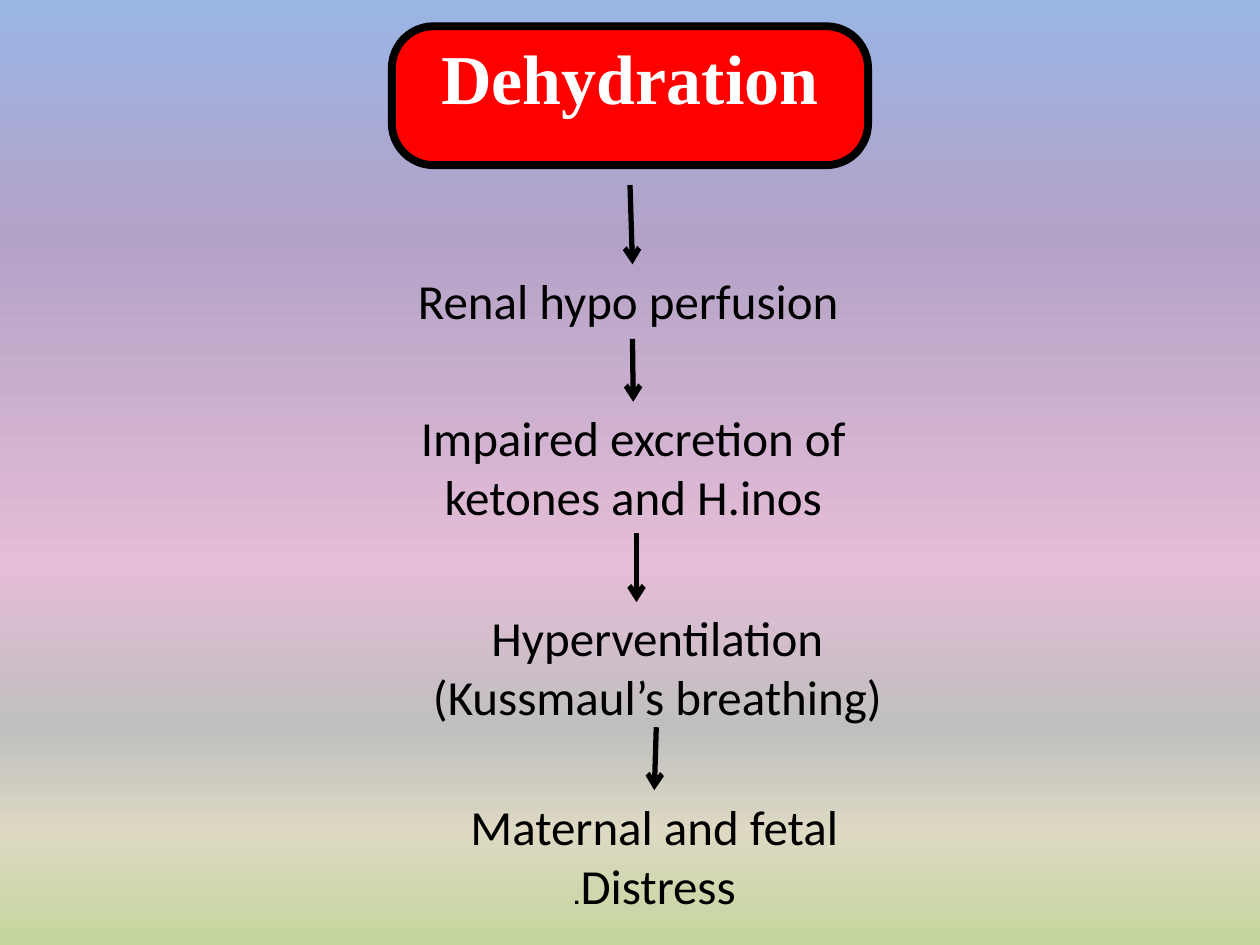
"""Build the dehydration flow chart slide."""
import pptx
import pptx.dml.color
import pptx.enum.shapes
import pptx.enum.text
import pptx.oxml.ns
import pptx.util
from lxml import etree
from pptx.util import Cm

qn = pptx.oxml.ns.qn


def rgb(value):
    return pptx.dml.color.RGBColor.from_string(value)


def set_font(font, name, size, color):
    font.name = name
    font.size = pptx.util.Pt(size)
    font.color.rgb = rgb(color)


prs = pptx.Presentation()
prs.slide_width, prs.slide_height = Cm(25.4), Cm(19.05)
s = prs.slides.add_slide(prs.slide_layouts[6])

fill = s.background.fill
fill.gradient()
fill.gradient_angle = 270
stops = s._element.find(".//" + qn("a:gsLst"))
for gs in list(stops):
    stops.remove(gs)
for pos, color in [(0, "9AB5E4"), (25, "B3A2C7"), (60, "E5BDD7"),
                   (77, "BFBFBF"), (88, "DDD9C3"), (100, "C3D69B")]:
    gs = etree.SubElement(stops, qn("a:gs"), pos=str(pos * 1000))
    etree.SubElement(gs, qn("a:srgbClr"), val=color)

sp = s.shapes.add_shape(pptx.enum.shapes.MSO_SHAPE.ROUNDED_RECTANGLE,
                        Cm(7.9), Cm(0.53), Cm(9.6), Cm(2.8))
sp.adjustments[0] = 0.3
sp.shadow.inherit = False
sp.fill.solid()
sp.fill.fore_color.rgb = rgb("FF0000")
sp.line.color.rgb = rgb("000000")
sp.line.width = pptx.util.Pt(4.5)
tf = sp.text_frame
tf.margin_bottom = Cm(0.9)
tf.vertical_anchor = pptx.enum.text.MSO_ANCHOR.MIDDLE
p = tf.paragraphs[0]
p.text = "Dehydration"
p.alignment = pptx.enum.text.PP_ALIGN.CENTER
p.font.bold = True
set_font(p.font, "Times New Roman", 40, "FFFFFF")

steps = [
    ("Renal hypo perfusion", 5.87, 5.33, 13.59, 1.45),
    ("Impaired excretion of ketones and H.inos", 6.86, 8.1, 11.81, 2.64),
    ("Hyperventilation (Kussmaul’s breathing)", 7.85, 12.12, 10.8, 2.64),
    ("Maternal and fetal Distress", 8.76, 15.93, 8.86, 2.64),
]
boxes = []
for text, *box in steps:
    sp = s.shapes.add_textbox(*map(Cm, box))
    tf = sp.text_frame
    tf.word_wrap = True
    tf.auto_size = pptx.enum.text.MSO_AUTO_SIZE.SHAPE_TO_FIT_TEXT
    p = tf.paragraphs[0]
    p.alignment = pptx.enum.text.PP_ALIGN.CENTER
    p._p.get_or_add_pPr().set("rtl", "1")
    r = p.add_run()
    r.text = text
    set_font(r.font, "Calibri", 28, "000000")
    boxes.append(sp)

r = p.add_run()
r.text = "."
set_font(r.font, "Calibri", 18, "000000")

arrows = [
    (12.7, 3.73, 12.75, 5.33, None),
    (12.75, 6.83, 12.75, 8.13, boxes[1]),
    (12.83, 10.74, 12.83, 12.14, None),
    (13.23, 14.66, 13.23, 15.93, boxes[3]),
]
for *ends, target in arrows:
    cx = s.shapes.add_connector(pptx.enum.shapes.MSO_CONNECTOR.STRAIGHT, *map(Cm, ends))
    if target is not None:
        cx.end_connect(target, 0)
    cx.line.color.rgb = rgb("000000")
    cx.line.width = pptx.util.Pt(3)
    etree.SubElement(cx.line._get_or_add_ln(), qn("a:tailEnd"), type="arrow")
    etree.SubElement(cx._element.spPr, qn("a:effectLst"))

prs.save("out.pptx")
